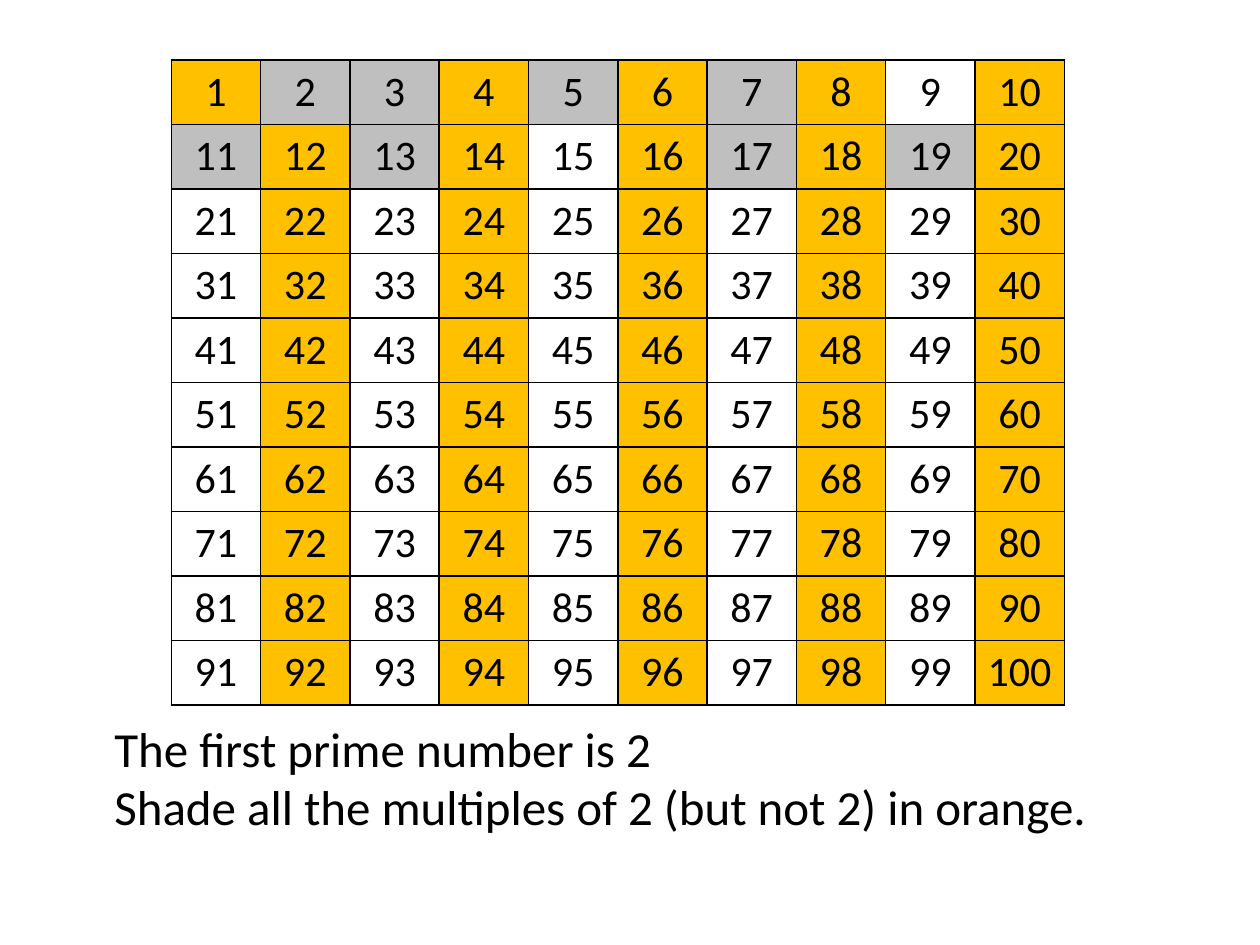
from dataclasses import dataclass

from lxml import etree
from pptx import Presentation
from pptx import util as u
from pptx.dml import color
from pptx.enum import shapes, text
from pptx.oxml import ns

SIDE = 10
BLACK, ORANGE, GREY = "000000", "FFC000", "BFBFBF"
PRIMES_TO_20 = (2, 3, 5, 7, 11, 13, 17, 19)


@dataclass(frozen=True)
class Grid:
    left: float
    top: float
    column: float
    row: float

    def position(self, number: int) -> tuple[float, float]:
        row, column = divmod(number - 1, SIDE)
        return self.left + column * self.column, self.top + row * self.row


@dataclass(frozen=True)
class Shade:
    number: int
    fill: str


def rgb(value: str) -> color.RGBColor:
    return color.RGBColor.from_string(value)


def write(frame, lines, *, size, align=text.PP_ALIGN.LEFT, font="Calibri", ink=BLACK):
    for index, line in enumerate(lines):
        paragraph = frame.paragraphs[0] if index == 0 else frame.add_paragraph()
        paragraph.alignment = align
        run = paragraph.add_run()
        run.text = line
        run.font.size, run.font.name = u.Pt(size), font
        run.font.color.rgb = rgb(ink)


def draw_shade(slide, grid: Grid, shade: Shade) -> None:
    left, top = grid.position(shade.number)
    square = slide.shapes.add_shape(
        shapes.MSO_SHAPE.RECTANGLE,
        u.Inches(left), u.Inches(top), u.Inches(grid.column), u.Inches(grid.row))
    square.shadow.inherit = False
    square.fill.solid()
    square.fill.fore_color.rgb = rgb(shade.fill)
    square.line.fill.background()


def border(cell, ink: str, points: float) -> None:
    properties = cell._tc.get_or_add_tcPr()
    for side in ("a:lnL", "a:lnR", "a:lnT", "a:lnB"):
        edge = etree.SubElement(properties, ns.qn(side), w=str(u.Pt(points)))
        solid = etree.SubElement(edge, ns.qn("a:solidFill"))
        etree.SubElement(solid, ns.qn("a:srgbClr"), val=ink)


def draw_hundred_square(slide, grid: Grid) -> None:
    table = slide.shapes.add_table(
        SIDE, SIDE, u.Inches(grid.left), u.Inches(grid.top),
        u.Inches(SIDE * grid.column), u.Inches(SIDE * grid.row)).table
    table.first_row = table.horz_banding = False
    for number, cell in enumerate(table.iter_cells(), start=1):
        border(cell, BLACK, 1)
        cell.fill.background()
        cell.vertical_anchor = text.MSO_ANCHOR.MIDDLE
        write(cell.text_frame, [str(number)], size=24, align=text.PP_ALIGN.CENTER)
    first, last = table.cell(0, 0), table.cell(SIDE - 1, SIDE - 1)
    first.fill.solid()
    first.fill.fore_color.rgb = rgb(ORANGE)
    last.margin_left = last.margin_right = u.Inches(0.04)


def draw_instructions(slide, lines: list[str]) -> None:
    box = slide.shapes.add_textbox(
        u.Inches(0.81), u.Inches(5.65), u.Inches(8.07), u.Inches(1.04))
    box.text_frame.word_wrap = True
    box.text_frame.auto_size = text.MSO_AUTO_SIZE.SHAPE_TO_FIT_TEXT
    write(box.text_frame, lines, size=28)


def main() -> None:
    """Build the hundred square with its shaded multiples of two."""
    deck = Presentation()
    deck.slide_width, deck.slide_height = u.Inches(10), u.Inches(7.5)
    slide = deck.slides.add_slide(deck.slide_layouts[6])
    grid = Grid(left=1.36, top=0.475, column=0.709, row=0.512)
    multiples = [Shade(number, ORANGE) for number in range(4, SIDE * SIDE + 1, 2)]
    primes = [Shade(number, GREY) for number in PRIMES_TO_20]
    for shade in multiples + primes:
        draw_shade(slide, grid, shade)
    draw_instructions(slide, [
        "The first prime number is 2",
        "Shade all the multiples of 2 (but not 2) in orange.",
    ])
    draw_hundred_square(slide, grid)
    deck.save("out.pptx")


if __name__ == "__main__":
    main()
